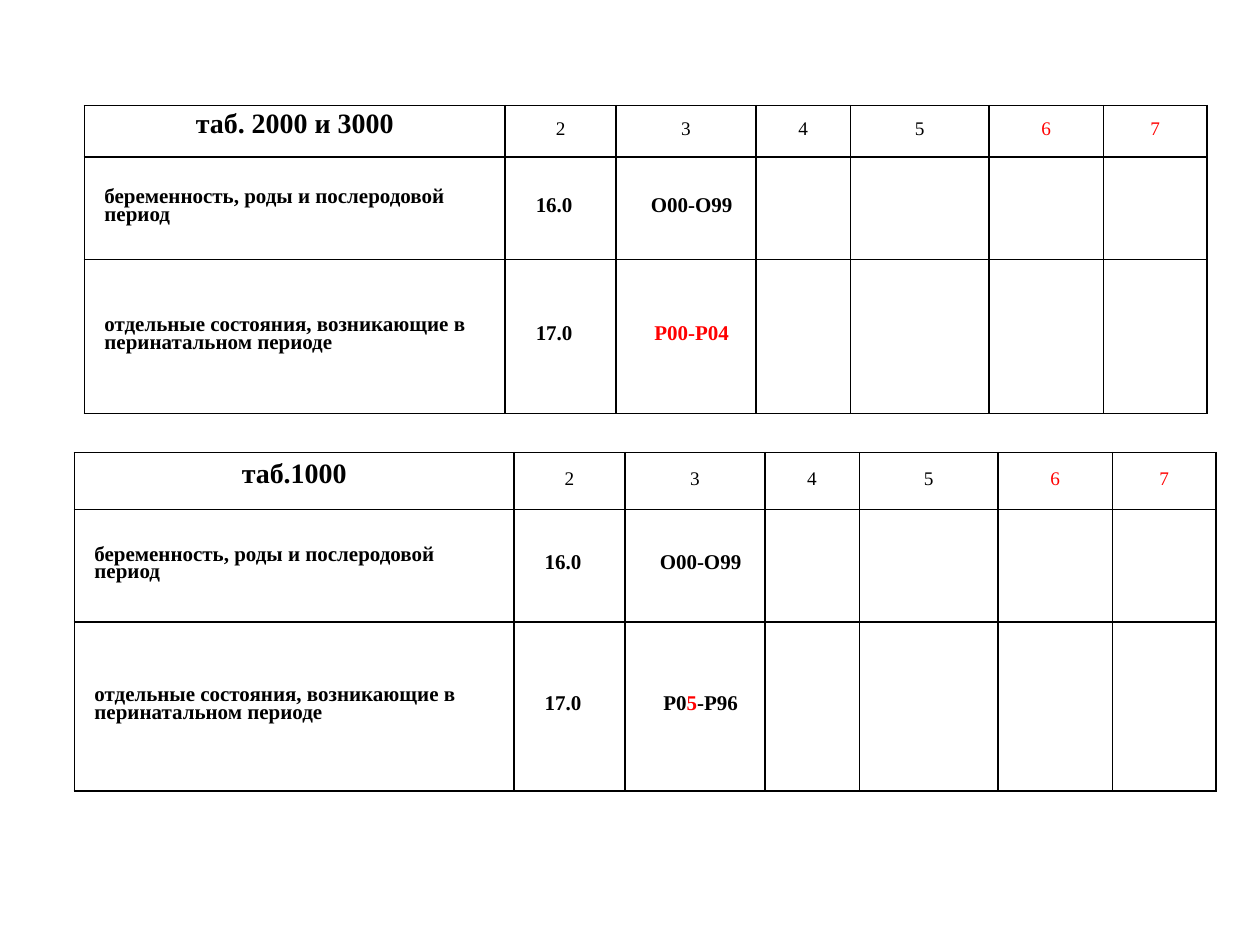
from dataclasses import dataclass

from lxml.etree import SubElement
from pptx import Presentation
from pptx.dml.color import RGBColor
from pptx.enum.text import MSO_ANCHOR as Anchor, PP_ALIGN as Align
from pptx.oxml.ns import qn
from pptx.util import Pt

BLACK, RED = "000000", "FF0000"
FONT = "Times New Roman"
CODE_WIDTHS = [63.36, 79.92, 54, 79.2, 65.52, 59.04]
INDENT = 6.5


@dataclass
class FormTable:
    title: str
    left: float
    top: float
    name_width: float
    row_heights: list[float]
    perinatal_codes: list[tuple[str, str]]


FORM_TABLES = [
    FormTable("таб.1000", 42.5, 258.7, 251.3, [32.4, 64.3, 96.5],
              [("P0", BLACK), ("5", RED), ("-P96", BLACK)]),
    FormTable("таб. 2000 и 3000", 48.2, 60.4, 240.5, [29.3, 58.6, 87.9],
              [("P00-P04", RED)]),
]


def rgb(value: str) -> RGBColor:
    return RGBColor.from_string(value)


def write(cell, text, *, size=12, bold=True, color=BLACK, align=Align.LEFT, indent=0) -> None:
    """Fill a cell with a string, or with (text, colour) pairs."""
    paragraph = cell.text_frame.paragraphs[0]
    paragraph.alignment = align
    paragraph.line_spacing = Pt(10)
    if indent:
        properties = paragraph._p.get_or_add_pPr()
        properties.set("marL", str(Pt(indent)))
        properties.set("indent", "0")
    for part, part_color in [(text, color)] if isinstance(text, str) else text:
        run = paragraph.add_run()
        run.text = part
        run.font.name = FONT
        run.font.size = Pt(size)
        run.font.bold = bold
        run.font.color.rgb = rgb(part_color)


def style_cell(cell) -> None:
    """Give a cell thin black borders, no fill and centred anchoring."""
    cell.vertical_anchor = Anchor.MIDDLE
    cell.margin_left = cell.margin_right = Pt(5)
    cell.margin_top = cell.margin_bottom = Pt(0)
    properties = cell._tc.get_or_add_tcPr()
    for side in ("lnL", "lnR", "lnT", "lnB"):
        border = SubElement(properties, qn(f"a:{side}"), w=str(Pt(1)))
        fill = SubElement(border, qn("a:solidFill"))
        SubElement(fill, qn("a:srgbClr"), val=BLACK)
    cell.fill.background()


def draw_form_table(slide, form: FormTable) -> None:
    widths = [form.name_width, *CODE_WIDTHS]
    frame = slide.shapes.add_table(
        len(form.row_heights), len(widths), Pt(form.left), Pt(form.top),
        Pt(sum(widths)), Pt(sum(form.row_heights)))
    table = frame.table
    table.first_row = table.horz_banding = False
    for column, width in zip(table.columns, widths):
        column.width = Pt(width)
    for row, height in zip(table.rows, form.row_heights):
        row.height = Pt(height)
    for cell in table.iter_cells():
        style_cell(cell)

    # Header: title and column numbers
    write(table.cell(0, 0), form.title, size=16, align=Align.CENTER)
    for number in range(2, 8):
        write(table.cell(0, number - 1), str(number), size=11, bold=False,
              color=RED if number >= 6 else BLACK, align=Align.CENTER)

    # Disease classes: name, line number, ICD codes
    classes = [
        ("беременность, роды и послеродовой период", "16.0", "O00-O99"),
        ("отдельные состояния, возникающие в перинатальном периоде", "17.0",
         form.perinatal_codes),
    ]
    for row, (name, line_number, codes) in enumerate(classes, start=1):
        write(table.cell(row, 0), name, indent=INDENT)
        write(table.cell(row, 1), line_number, indent=INDENT + 6)
        write(table.cell(row, 2), codes, align=Align.CENTER, indent=INDENT)


def main() -> None:
    presentation = Presentation()
    presentation.slide_width, presentation.slide_height = Pt(720), Pt(540)
    slide = presentation.slides.add_slide(presentation.slide_layouts[6])
    for form in FORM_TABLES:
        draw_form_table(slide, form)
    presentation.save("out.pptx")


if __name__ == "__main__":
    main()
